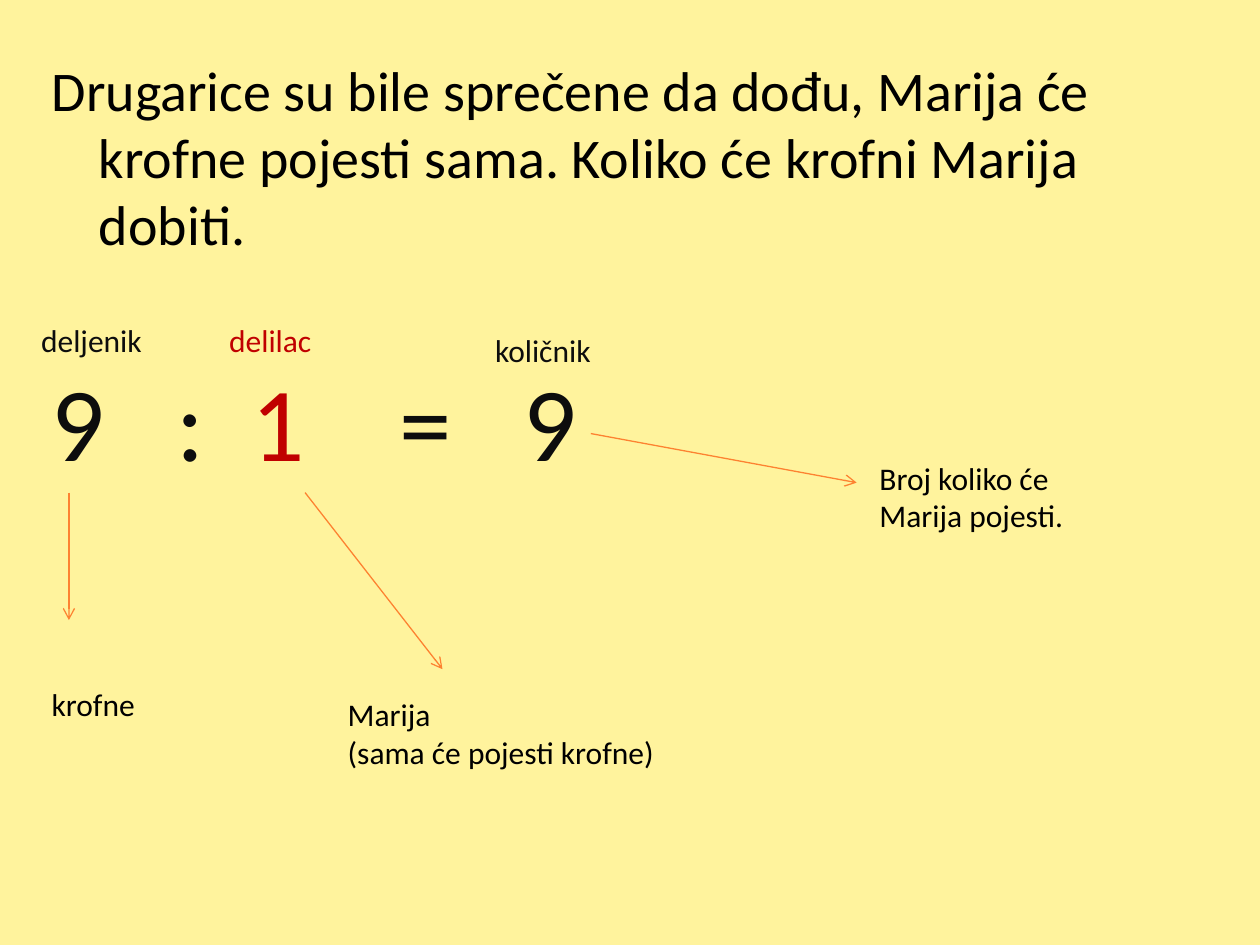
from typing import NamedTuple

from lxml.etree import SubElement
from pptx import Presentation
from pptx.dml.color import RGBColor
from pptx.enum.shapes import MSO_CONNECTOR
from pptx.enum.text import MSO_AUTO_SIZE
from pptx.oxml.ns import qn
from pptx.util import Cm, Pt

FONT = "Calibri"
CREAM = RGBColor(0xFF, 0xF3, 0x9D)
BLACK = RGBColor(0x00, 0x00, 0x00)
INK = RGBColor(0x0D, 0x0D, 0x0D)
RED = RGBColor(0xC0, 0x00, 0x00)
ORANGE = RGBColor(0xFD, 0x82, 0x31)


class Label(NamedTuple):
    text: str
    left: float
    top: float
    width: float = 2.77
    height: float = 1.02
    color: RGBColor = BLACK


class Arrow(NamedTuple):
    x1: float
    y1: float
    x2: float
    y2: float


class Term(NamedTuple):
    text: str
    gap: float = 0
    color: RGBColor = INK


QUESTION = ("Drugarice su bile sprečene da dođu, Marija će krofne pojesti sama. "
            "Koliko će krofni Marija dobiti.")
EQUATION = [
    Term("9", 27.12),
    Term(":", 13.56),
    Term("1", 40.68, RED),
    Term("=", 27.12),
    Term("9"),
]

LABELS = [
    Label("deljenik", 0.58, 6.35, color=INK),
    Label("delilac", 4.37, 6.35, color=RED),
    Label("količnik", 9.73, 6.55, color=INK),
    Label("krofne", 0.79, 13.69),
    Label("Marija\n(sama će pojesti krofne)", 6.76, 13.89, 7.54, 1.8),
    Label("Broj koliko će Marija pojesti.", 17.48, 9.12, 5.56, 1.8),
]
ARROWS = [
    Arrow(1.39, 9.93, 1.39, 12.5),
    Arrow(6.15, 9.93, 8.92, 13.49),
    Arrow(11.91, 8.74, 17.27, 9.73),
]


def format_run(r, size: int, color: RGBColor) -> None:
    r.font.name = FONT
    r.font.size = Pt(size)
    r.font.color.rgb = color


def set_indent(p, margin: float, first_line: float) -> None:
    pPr = p._p.get_or_add_pPr()
    pPr.set("marL", str(Cm(margin)))
    pPr.set("indent", str(Cm(first_line)))
    SubElement(pPr, qn("a:buNone"))


def add_term(p, term: Term) -> None:
    r = p.add_run()
    r.text = term.text
    format_run(r, 60, term.color)
    if term.gap:
        space = p.add_run()
        space.text = " "
        format_run(space, 60, term.color)
        space._r.get_or_add_rPr().set("spc", str(round(term.gap * 100)))


def fill_body(sp) -> None:
    sp.left, sp.top, sp.width, sp.height = Cm(0.79), Cm(0.99), Cm(22.86), Cm(12.57)
    tf = sp.text_frame
    tf.text = QUESTION
    tf.auto_size = MSO_AUTO_SIZE.NONE
    p = tf.paragraphs[0]
    set_indent(p, 0.95, -0.95)
    format_run(p.runs[0], 32, BLACK)

    p = tf.add_paragraph()
    set_indent(p, 0.95, -0.95)
    p.space_before = Pt(57)
    for term in EQUATION:
        add_term(p, term)


def add_label(s, label: Label) -> None:
    sp = s.shapes.add_textbox(Cm(label.left), Cm(label.top),
                              Cm(label.width), Cm(label.height))
    tf = sp.text_frame
    tf.text = label.text
    tf.word_wrap = True
    tf.auto_size = MSO_AUTO_SIZE.SHAPE_TO_FIT_TEXT
    for p in tf.paragraphs:
        format_run(p.runs[0], 18, label.color)


def add_arrow(s, arrow: Arrow) -> None:
    line = s.shapes.add_connector(MSO_CONNECTOR.STRAIGHT, *map(Cm, arrow))
    line.line.color.rgb = ORANGE
    line.line.width = Pt(0.75)
    SubElement(line.line._get_or_add_ln(), qn("a:tailEnd"), type="arrow")
    SubElement(line._element.spPr, qn("a:effectLst"))


def main() -> None:
    prs = Presentation()
    prs.slide_width, prs.slide_height = Cm(25.4), Cm(19.05)
    s = prs.slides.add_slide(prs.slide_layouts[1])
    s.background.fill.solid()
    s.background.fill.fore_color.rgb = CREAM
    title = s.shapes.title._element
    title.getparent().remove(title)

    fill_body(s.placeholders[1])
    for arrow in ARROWS:
        add_arrow(s, arrow)
    for label in LABELS:
        add_label(s, label)
    prs.save("out.pptx")


if __name__ == "__main__":
    main()
